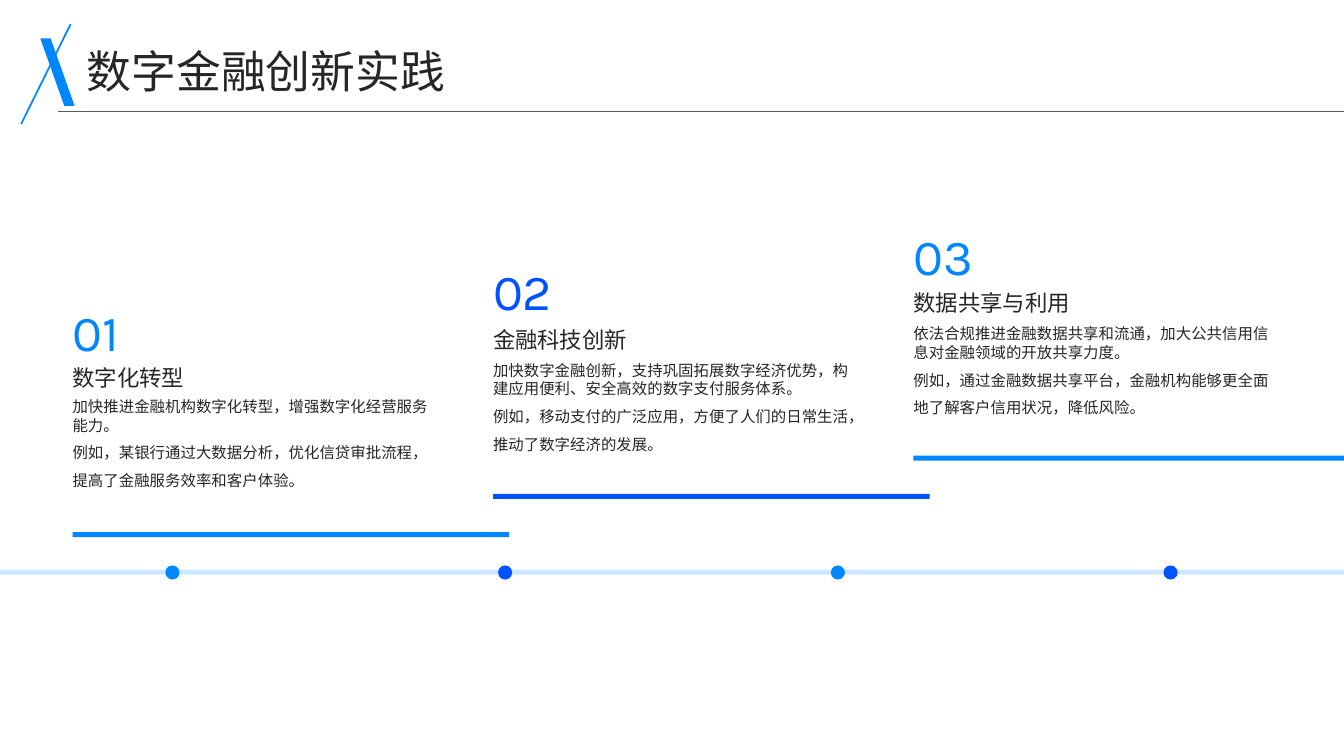
from dataclasses import dataclass

from lxml import etree
from pptx import Presentation
from pptx.dml.color import RGBColor
from pptx.enum.lang import MSO_LANGUAGE_ID
from pptx.enum.shapes import MSO_CONNECTOR, MSO_SHAPE
from pptx.enum.text import MSO_ANCHOR
from pptx.oxml.ns import qn
from pptx.util import Inches, Pt


@dataclass(frozen=True)
class Theme:
    sky: str = "0086FF"
    blue: str = "0051FF"
    pale: str = "CCE7FF"
    ink: str = "262626"
    rule: str = "595959"
    han: str = "Noto Sans CJK SC"
    latin: str = "Karla"
    title: float = 32
    number: float = 36
    head: float = 16
    body: float = 11


class Deck:
    def __init__(self, theme):
        self.theme = theme
        self.file = Presentation()
        self.file.slide_width = Inches(13.33)
        self.file.slide_height = Inches(7.5)
        self.slide = self.file.slides.add_slide(self.file.slide_layouts[6])

    def shape(self, kind, box, color, adjust=None, flip=False):
        item = self.slide.shapes.add_shape(kind, *map(Inches, box))
        item.shadow.inherit = False
        item.fill.solid()
        item.fill.fore_color.rgb = RGBColor.from_string(color)
        item.line.fill.background()
        if adjust is not None:
            item.adjustments[0] = adjust
        if flip:
            item.element.spPr.find(qn("a:xfrm")).set("flipH", "1")

    def line(self, start, end, color, width):
        item = self.slide.shapes.add_connector(
            MSO_CONNECTOR.STRAIGHT, *map(Inches, start + end))
        item.line.color.rgb = RGBColor.from_string(color)
        item.line.width = Pt(width)
        etree.SubElement(item.element.spPr, qn("a:effectLst"))

    def text(self, words, box, size, color=None, font=None, asian=None,
             anchor=MSO_ANCHOR.TOP, spacing=(1.0,)):
        """Add a text box with one line spacing for each paragraph."""
        item = self.slide.shapes.add_textbox(*map(Inches, box))
        frame = item.text_frame
        frame.word_wrap = True
        frame.vertical_anchor = anchor
        frame.margin_left = frame.margin_right = 0
        frame.margin_top = frame.margin_bottom = 0
        frame.text = words
        for para, pitch in zip(frame.paragraphs, spacing):
            para.line_spacing = pitch
            font_run = para.runs[0].font
            font_run.size = Pt(size)
            font_run.name = font or self.theme.han
            font_run.language_id = MSO_LANGUAGE_ID.SIMPLIFIED_CHINESE
            font_run.color.rgb = RGBColor.from_string(color or self.theme.ink)
            east = etree.SubElement(font_run._element, qn("a:ea"))
            east.set("typeface", asian or self.theme.latin)


STEPS = [
    ("数字化转型", 2.95,
     "加快推进金融机构数字化转型，增强数字化经营服务能力。\n"
     "例如，某银行通过大数据分析，优化信贷审批流程，提高了金融服务效率和客户体验。"),
    ("金融科技创新", 2.54,
     "加快数字金融创新，支持巩固拓展数字经济优势，构建应用便利、安全高效的数字支付服务体系。\n"
     "例如，移动支付的广泛应用，方便了人们的日常生活，推动了数字经济的发展。"),
    ("数据共享与利用", 2.19,
     "依法合规推进金融数据共享和流通，加大公共信用信息对金融领域的开放共享力度。\n"
     "例如，通过金融数据共享平台，金融机构能够更全面地了解客户信用状况，降低风险。"),
]


def main():
    theme = Theme()
    deck = Deck(theme)
    tones = (theme.sky, theme.blue)

    deck.shape(MSO_SHAPE.ROUNDED_RECTANGLE, (-0.77, 5.65, 14.87, 0.05),
               theme.pale, adjust=0.5)
    for i in range(4):
        deck.shape(MSO_SHAPE.OVAL, (1.64 + 3.3 * i, 5.61, 0.14, 0.14),
                   tones[i % 2])

    for i, (head, top, body) in enumerate(STEPS):
        left, tone = 0.72 + 4.17 * i, tones[i % 2]
        deck.shape(MSO_SHAPE.RECTANGLE, (left, 5.28 - 0.38 * i, 4.33, 0.05),
                   tone)
        deck.text(f"{i + 1:02}", (left, top, 3.54, 0.64), theme.number, tone,
                  font=theme.latin, anchor=MSO_ANCHOR.BOTTOM)
        deck.text(head, (left, 3.61 - 0.37 * i, 3.54, 0.34), theme.head)
        deck.text(body, (left, 3.94 - 0.36 * i, 3.54, 1.14), theme.body,
                  spacing=(1.0, 1.5))

    deck.text("数字金融创新实践", (0.86, 0.44, 11.74, 0.47), theme.title,
              asian=theme.han, anchor=MSO_ANCHOR.MIDDLE, spacing=(1.1,))
    deck.shape(MSO_SHAPE.PARALLELOGRAM, (0.4, 0.38, 0.34, 0.67), theme.sky,
               adjust=0.7, flip=True)
    deck.line((0.7, 0.24), (0.21, 1.23), theme.sky, 1.25)
    deck.line((0.58, 1.11), (13.39, 1.11), theme.rule, 0.75)
    deck.file.save("out.pptx")


if __name__ == "__main__":
    main()
